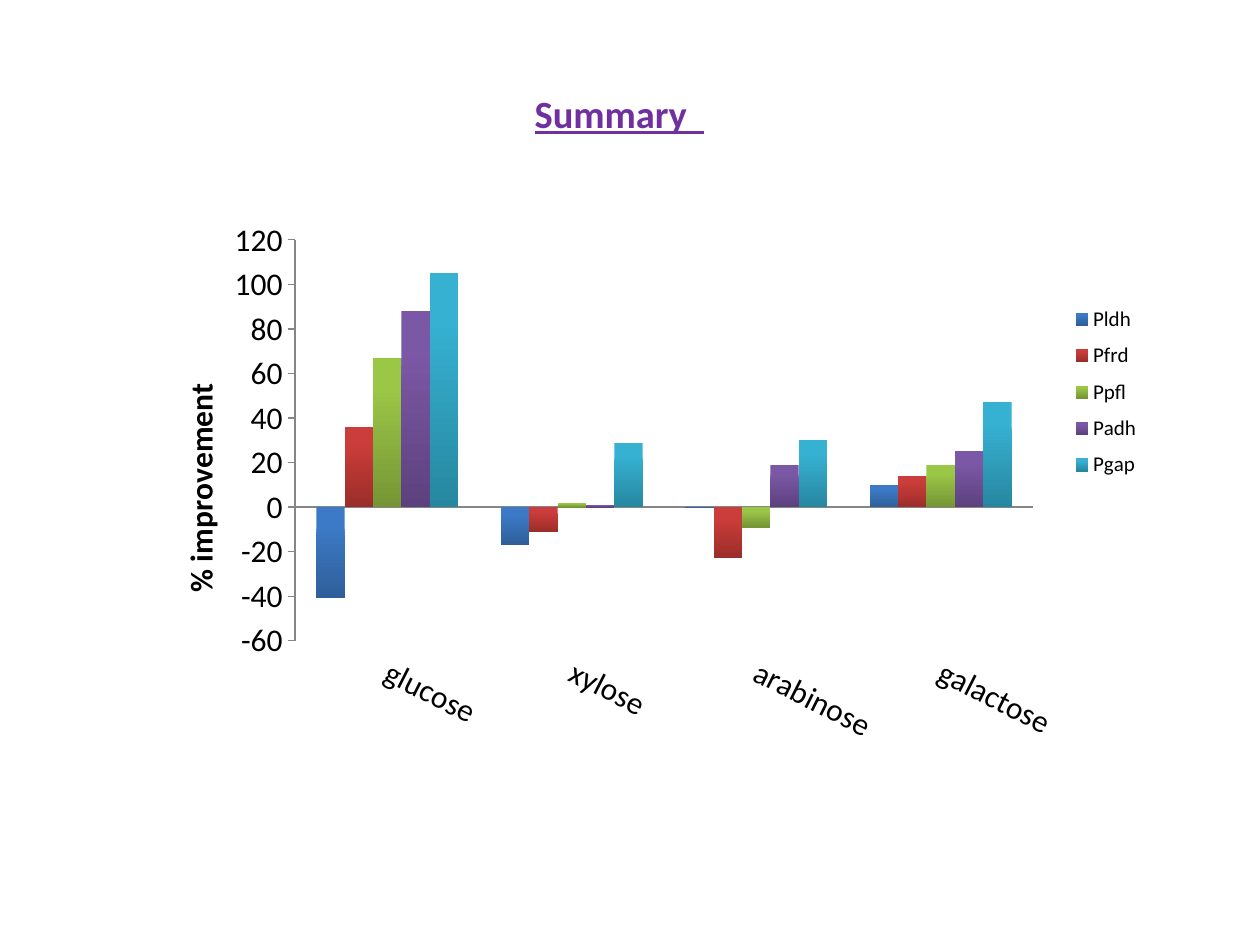
from lxml import etree
from pptx import Presentation
from pptx.chart.data import CategoryChartData
from pptx.dml.color import RGBColor
from pptx.enum.chart import (XL_CHART_TYPE, XL_LEGEND_POSITION,
                             XL_TICK_LABEL_POSITION, XL_TICK_MARK)
from pptx.enum.text import MSO_AUTO_SIZE, PP_ALIGN
from pptx.oxml.ns import qn
from pptx.util import Pt

COLUMNS = XL_CHART_TYPE.COLUMN_CLUSTERED
RIGHT = XL_LEGEND_POSITION.RIGHT
LOW = XL_TICK_LABEL_POSITION.LOW
NO_TICK, OUTSIDE = XL_TICK_MARK.NONE, XL_TICK_MARK.OUTSIDE
GROW = MSO_AUTO_SIZE.SHAPE_TO_FIT_TEXT
CENTER = PP_ALIGN.CENTER

EMU_PER_PX = 914400 // 126
FONT = "Calibri"
SUGARS = ["glucose", "xylose", "arabinose", "galactose"]
# promoter, % improvement per sugar, top colour, bottom colour
PROMOTERS = [
    ("Pldh", (-41, -17, 0, 10), "3C7AC7", "2E5F99"),
    ("Pfrd", (36, -11, -23, 14), "CB3D3A", "9B2D2A"),
    ("Ppfl", (67, 2, -9, 19), "9BC747", "769535"),
    ("Padh", (88, 1, 19, 25), "7B58A6", "5D417E"),
    ("Pgap", (105, 29, 30, 47), "36B1D2", "2787A0"),
]


def px(*lengths):
    return [length * EMU_PER_PX for length in lengths]


def color(hex_code):
    return RGBColor.from_string(hex_code)


def style_font(font, size, hex_code="000000", bold=False):
    font.name, font.size, font.bold = FONT, Pt(size), bold
    font.color.rgb = color(hex_code)


def place(part, box, chart_box, inner=False):
    """Fix a chart part at box, in px from the chart's top left corner."""
    for old in part.findall(qn("c:layout")):
        part.remove(old)
    layout = etree.Element(qn("c:layout"))
    manual = etree.SubElement(layout, qn("c:manualLayout"))
    settings = [("layoutTarget", "inner")] if inner else []
    settings += [("xMode", "edge"), ("yMode", "edge")]
    extents = chart_box[2:] * 2
    settings += [(key, f"{length / extent:.4f}")
                 for key, length, extent in zip("xywh", box, extents)]
    for key, value in settings:
        etree.SubElement(manual, qn(f"c:{key}")).set("val", value)
    overlay = part.find(qn("c:overlay"))
    if overlay is None:
        part.insert(0, layout)
    else:
        overlay.addprevious(layout)


def style_axes(chart, chart_box):
    sugars, improvement = chart.category_axis, chart.value_axis
    for axis in (sugars, improvement):
        axis.has_major_gridlines = False
        axis.format.line.color.rgb = color("868686")
        axis.format.line.width = Pt(0.75)
        style_font(axis.tick_labels.font, 18)
    sugars.major_tick_mark = NO_TICK
    sugars.tick_label_position = LOW
    label_body = sugars._element.find(qn("c:txPr")).find(qn("a:bodyPr"))
    label_body.set("rot", str(27 * 60000))
    label_body.set("vert", "horz")

    improvement.major_tick_mark = OUTSIDE
    improvement.minimum_scale, improvement.maximum_scale = -60, 120
    improvement.major_unit = 20
    title = improvement.axis_title
    title.text_frame.text = "% improvement"
    style_font(title.text_frame.paragraphs[0].runs[0].font, 18, bold=True)
    title_body = title.text_frame._txBody.find(qn("a:bodyPr"))
    title_body.set("rot", str(-90 * 60000))
    title_body.set("vert", "horz")
    place(title._element, (34, 168), chart_box)


def style_columns(plot):
    plot.gap_width, plot.overlap = 150, 0
    plot.vary_by_categories = False
    for series, (_, _, top, bottom) in zip(plot.series, PROMOTERS):
        series.invert_if_negative = False
        fill = series.format.fill
        fill.gradient()
        fill.gradient_angle = 270
        for stop, position, shade in zip(fill.gradient_stops, (0.2, 1), (top, bottom)):
            stop.position = position
            stop.color.rgb = color(shade)


def add_improvement_chart(slide, box):
    data = CategoryChartData()
    data.categories = SUGARS
    for promoter, values, _, _ in PROMOTERS:
        data.add_series(promoter, values)
    chart = slide.shapes.add_chart(COLUMNS, *px(*box), data).chart
    chart.has_title = False
    style_font(chart.font, 18)
    style_axes(chart, box)
    style_columns(chart.plots[0])

    chart.has_legend = True
    legend = chart.legend
    legend.position = RIGHT
    legend.include_in_layout = False
    style_font(legend.font, 12)
    place(legend._element, (927, 85, 80, 194), box)
    plot_area = chart._chartSpace.chart.plotArea
    place(plot_area, (156, 30, 738, 401), box, inner=True)


def add_heading(slide, box):
    frame = slide.shapes.add_textbox(*px(*box)).text_frame
    frame.word_wrap = True
    frame.auto_size = GROW
    frame.text = "Summary  "
    heading = frame.paragraphs[0]
    heading.alignment = CENTER
    font = heading.runs[0].font
    style_font(font, 22, "7030A0", bold=True)
    font.underline = True


def main():
    deck = Presentation()
    deck.slide_width, deck.slide_height = px(1260, 945)
    slide = deck.slides.add_slide(deck.slide_layouts[6])
    add_improvement_chart(slide, (139, 210, 1027, 546))
    add_heading(slide, (147, 84, 945, 59))
    deck.save("out.pptx")


if __name__ == "__main__":
    main()
